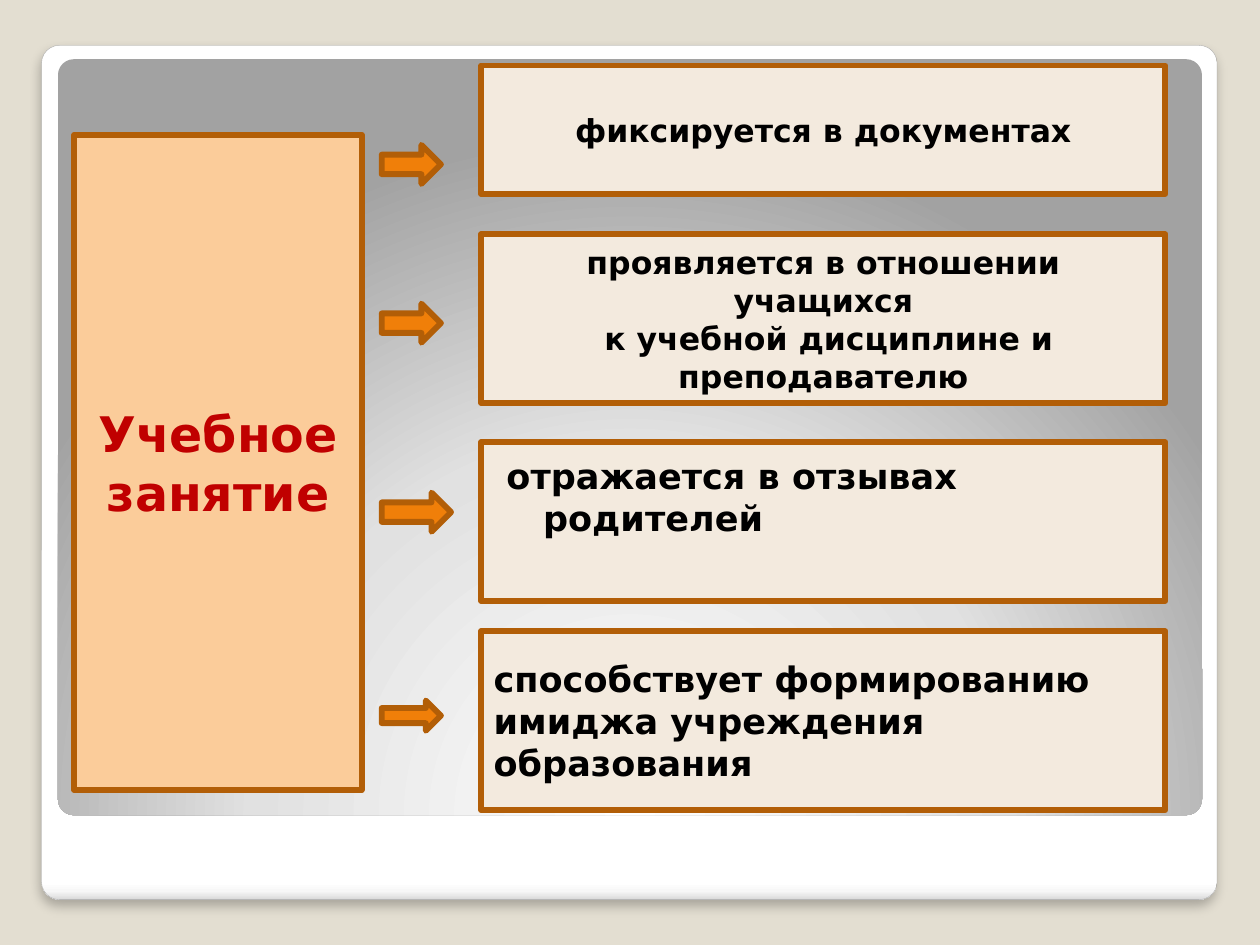
"""Build a slide showing how a lesson's results appear in four areas."""
from dataclasses import dataclass

import pptx
import pptx.dml.color
import pptx.enum.shapes
import pptx.enum.text
import pptx.oxml
import pptx.oxml.ns
import pptx.util

Inches = pptx.util.Inches
Pt = pptx.util.Pt
Kind = pptx.enum.shapes.MSO_SHAPE
Align = pptx.enum.text.PP_ALIGN
Anchor = pptx.enum.text.MSO_ANCHOR
NS = pptx.oxml.ns.nsdecls("a")
BROWN, CREAM, ORANGE = "B25E07", "F3EADE", "F07F09"
LEFT, WIDTH = 3.82, 5.43


@dataclass
class Card:
    box: tuple[float, float, float, float]
    lines: list[str]
    size: int
    align: Align = Align.CENTER
    fill: str = CREAM
    ink: str = "000000"


@dataclass
class Arrow:
    top: float
    width: float = 0.47
    height: float = 0.31


CARDS = [
    Card((0.59, 1.07, 2.28, 5.2), ["Учебное занятие"], 28, fill="FBCC9A", ink="C00000"),
    Card((LEFT, 0.52, WIDTH, 1.02), ["фиксируется в документах"], 18),
    Card((LEFT, 1.86, WIDTH, 1.34),
         ["проявляется в отношении учащихся", " к учебной дисциплине и преподавателю"], 18),
    Card((LEFT, 5.01, WIDTH, 1.42),
         ["способствует формированию имиджа учреждения образования"], 20, Align.LEFT),
]
REVIEW = Card((LEFT, 3.51, WIDTH, 1.26), ["отражается в отзывах родителей"], 20, Align.LEFT)
ARROWS = [Arrow(1.15), Arrow(2.41), Arrow(3.91, width=0.55), Arrow(5.56, height=0.24)]


def rgb(code: str):
    """Turn a hex string into a colour."""
    return pptx.dml.color.RGBColor.from_string(code)


def add(slide, kind, box: tuple[float, float, float, float]):
    """Add a shape without a shadow."""
    shape = slide.shapes.add_shape(kind, *map(Inches, box))
    shape.shadow.inherit = False
    return shape


def paint(shape, fill: str) -> None:
    """Give a shape a plain fill and the brown outline."""
    shape.fill.solid()
    shape.fill.fore_color.rgb = rgb(fill)
    shape.line.color.rgb = rgb(BROWN)
    shape.line.width = Pt(3.35)


def panel(slide, box: tuple[float, float, float, float], stops: list[tuple[int, str]], way: str):
    """Add a rounded panel with a gradient running the given way."""
    shape = add(slide, Kind.ROUNDED_RECTANGLE, box)
    shape.adjustments[0] = 0.021
    shape.line.fill.background()
    shape.fill.gradient()
    marks = "".join(f'<a:gs pos="{pos * 1000}"><a:srgbClr val="{code}"/></a:gs>'
                    for pos, code in stops)
    grad = pptx.oxml.parse_xml(
        f'<a:gradFill {NS} rotWithShape="1"><a:gsLst>{marks}</a:gsLst>{way}</a:gradFill>')
    props = shape._element.spPr
    props.replace(props.find(pptx.oxml.ns.qn("a:gradFill")), grad)
    return shape


def backdrop(slide) -> None:
    """Draw the white frame with its shadow and the grey panel."""
    frame = panel(slide, (0.33, 0.36, 9.33, 6.78),
                  [(0, "FFFFFF"), (98, "FFFFFF"), (99, "F7F7F7"), (100, "DADADA")],
                  '<a:lin ang="5400000" scaled="0"/>')
    frame.line.color.rgb = rgb("A4A4A4")
    frame.line.width = Pt(0.16)
    shade = pptx.oxml.parse_xml(
        f'<a:outerShdw {NS} blurRad="{Pt(6)}" dist="{Pt(4)}" dir="5400000" rotWithShape="0">'
        '<a:srgbClr val="000000"><a:alpha val="25000"/></a:srgbClr></a:outerShdw>')
    frame._element.spPr.find(pptx.oxml.ns.qn("a:effectLst")).append(shade)
    panel(slide, (0.46, 0.47, 9.08, 6), [(0, "FFFFFF"), (55, "E1E1E1"), (100, "A2A2A2")],
          '<a:path path="circle">'
          '<a:fillToRect l="50000" t="175000" r="50000" b="-75000"/></a:path>')


def draw_card(slide, card: Card):
    """Draw a box with bold text and return its text frame."""
    shape = add(slide, Kind.RECTANGLE, card.box)
    paint(shape, card.fill)
    frame = shape.text_frame
    frame.word_wrap = True
    frame.vertical_anchor = Anchor.MIDDLE
    frame.text = "\n".join(card.lines)
    for para in frame.paragraphs:
        para.alignment = card.align
        para.font.name = "DejaVu Sans"
        para.font.size = Pt(card.size)
        para.font.bold = True
        para.font.color.rgb = rgb(card.ink)
    return frame


def draw_review(slide) -> None:
    """Draw the box whose text hangs from its top edge."""
    frame = draw_card(slide, REVIEW)
    frame.vertical_anchor = Anchor.TOP
    frame.margin_left = Inches(0.2)
    frame.margin_top = Inches(0.1)
    props = frame.paragraphs[0]._p.get_or_add_pPr()
    props.set("marL", str(Inches(0.29)))
    props.set("indent", str(Inches(-0.29)))


def draw_arrow(slide, arrow: Arrow) -> None:
    """Draw a block arrow pointing right."""
    paint(add(slide, Kind.RIGHT_ARROW, (3.03, arrow.top, arrow.width, arrow.height)), ORANGE)


def main() -> None:
    """Build and save the slide."""
    deck = pptx.Presentation()
    deck.slide_width, deck.slide_height = Inches(10), Inches(7.5)
    slide = deck.slides.add_slide(deck.slide_layouts[6])
    slide.background.fill.solid()
    slide.background.fill.fore_color.rgb = rgb("E3DED1")
    backdrop(slide)
    for card in CARDS:
        draw_card(slide, card)
    draw_review(slide)
    for arrow in ARROWS:
        draw_arrow(slide, arrow)
    deck.save("out.pptx")


if __name__ == "__main__":
    main()
